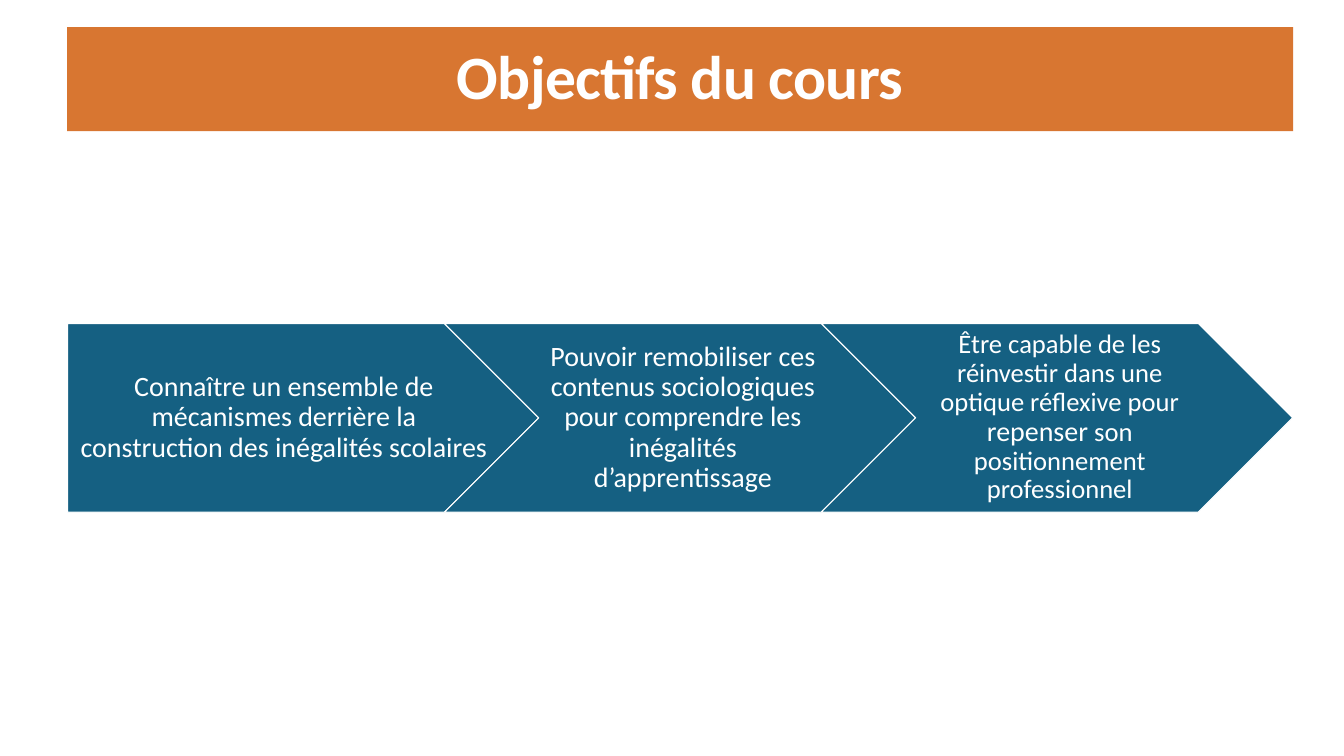
"""Build the course objectives slide: a title band above three chained arrows."""
from pptx import Presentation
from pptx.dml.color import RGBColor
from pptx.enum.shapes import MSO_SHAPE
from pptx.enum.text import MSO_ANCHOR, MSO_AUTO_SIZE, PP_ALIGN
from pptx.util import Inches, Pt

PENTAGON, CHEVRON = MSO_SHAPE.PENTAGON, MSO_SHAPE.CHEVRON
MIDDLE, CENTER, NO_FIT = MSO_ANCHOR.MIDDLE, PP_ALIGN.CENTER, MSO_AUTO_SIZE.NONE
WHITE = RGBColor(0xFF, 0xFF, 0xFF)
ORANGE = RGBColor(0xD8, 0x76, 0x31)
BLUE = RGBColor(0x15, 0x60, 0x82)
FONT = "Calibri"

TITLE = "Objectifs du cours"
OBJECTIVES = [
    (PENTAGON, 0.23, [
        ("Connaître un ensemble de mécanismes derrière la "
         "construction des inégalités scolaires", 40),
    ]),
    (CHEVRON, 0.17, [
        ("Pouvoir remobiliser ces contenus sociologiques pour comprendre "
         "les inégalités d’apprentissage", 40),
    ]),
    (CHEVRON, 0.17, [
        ("Être capable de les réinvestir dans une optique réflexive pour ", 38),
        ("repenser", 40),
        (" son positionnement professionnel", 38),
    ]),
]

ARROW_LEFT, ARROW_TOP = 1.34, 6.42
ARROW_WIDTH, ARROW_HEIGHT = 9.35, 3.74
ARROW_STEP = ARROW_WIDTH * 0.8


def write_text(shape, runs, bold=False):
    """Fill a shape with one centred white paragraph of sized runs."""
    frame = shape.text_frame
    frame.word_wrap = True
    frame.auto_size = NO_FIT
    frame.vertical_anchor = MIDDLE
    paragraph = frame.paragraphs[0]
    paragraph.alignment = CENTER
    paragraph.line_spacing = 0.9
    paragraph.font.name = FONT
    paragraph.font.bold = bold
    paragraph.font.color.rgb = WHITE
    for text, size in runs:
        run = paragraph.add_run()
        run.text = text
        run.font.size = Pt(size)
    return paragraph


def add_title(slide):
    """Turn the title placeholder into the orange band."""
    title = slide.shapes.title
    title.left, title.top = Inches(1.33), Inches(0.54)
    title.width, title.height = Inches(24.33), Inches(2.06)
    title.fill.solid()
    title.fill.fore_color.rgb = ORANGE
    paragraph = write_text(title, [(TITLE, 88)], bold=True)
    paragraph.runs[0].font._element.set("spc", "-100")


def add_arrow(slide, index, kind, inset, runs):
    """Add one arrow of the chain with its objective."""
    arrow = slide.shapes.add_shape(
        kind, Inches(ARROW_LEFT + index * ARROW_STEP), Inches(ARROW_TOP),
        Inches(ARROW_WIDTH), Inches(ARROW_HEIGHT))
    arrow.shadow.inherit = False
    arrow.fill.solid()
    arrow.fill.fore_color.rgb = BLUE
    arrow.line.color.rgb = WHITE
    arrow.line.width = Pt(1.5)
    frame = arrow.text_frame
    frame.margin_left, frame.margin_right = Inches(inset), Inches(0.06)
    frame.margin_top = frame.margin_bottom = Inches(0.12)
    write_text(arrow, runs)


def main():
    presentation = Presentation()
    presentation.slide_width = Inches(26.67)
    presentation.slide_height = Inches(15)
    slide = presentation.slides.add_slide(
        presentation.slide_layouts.get_by_name("Title Only"))
    add_title(slide)
    for index, (kind, inset, runs) in enumerate(OBJECTIVES):
        add_arrow(slide, index, kind, inset, runs)
    presentation.save("out.pptx")


if __name__ == "__main__":
    main()
